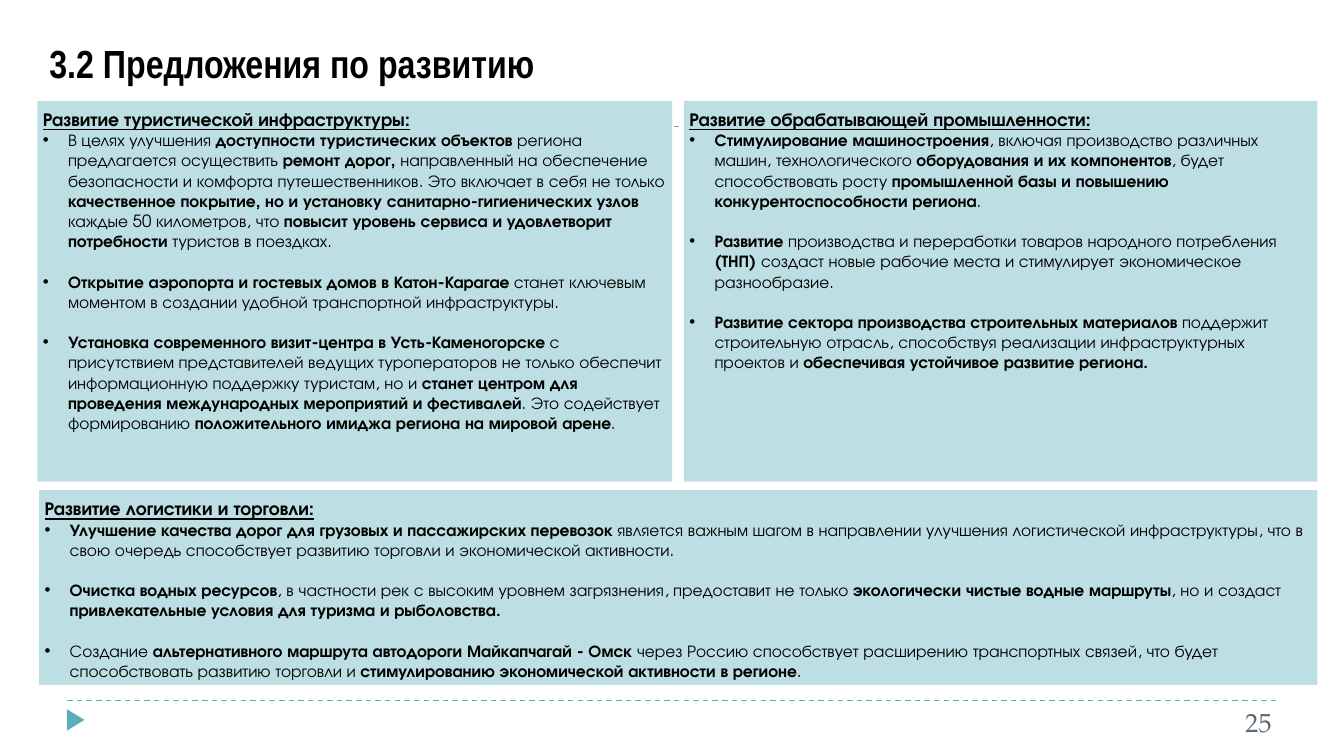
from lxml import etree
from pptx import Presentation
from pptx.dml.color import RGBColor
from pptx.enum.dml import MSO_LINE
from pptx.enum.shapes import MSO_CONNECTOR, MSO_SHAPE
from pptx.enum.text import MSO_ANCHOR, PP_ALIGN
from pptx.oxml.ns import qn
from pptx.util import Pt

TEAL = RGBColor(0x59, 0xB0, 0xB9)
PANEL = RGBColor(0xBD, 0xDF, 0xE3)
GREY = RGBColor(0x5B, 0x69, 0x73)
BLACK = RGBColor(0, 0, 0)
WHITE = RGBColor(0xFF, 0xFF, 0xFF)

BODY_FONT = "TeX Gyre Adventor"
TITLE_FONT = "Arial Narrow"
NUMBER_FONT = "TeX Gyre Pagella"
INDENT = Pt(13.5)
ITEM_GAP = Pt(10.8)

TOURISM = (
    "Развитие туристической инфраструктуры:",
    [
        "В целях улучшения *доступности туристических объектов *региона "
        "предлагается осуществить *ремонт дорог, *направленный на обеспечение "
        "безопасности и комфорта путешественников. Это включает в себя не только "
        "*качественное покрытие, но и установку санитарно-гигиенических узлов *"
        "каждые 50 километров, что *повысит уровень сервиса и удовлетворит "
        "потребности* туристов в поездках.",
        "*Открытие аэропорта и гостевых домов в Катон-Карагае *станет ключевым "
        "моментом в создании удобной транспортной инфраструктуры.",
        "*Установка современного визит-центра в Усть-Каменогорске *с "
        "присутствием представителей ведущих туроператоров не только обеспечит "
        "информационную поддержку туристам, но и *станет центром для проведения "
        "международных мероприятий и фестивалей*. Это содействует формированию "
        "*положительного имиджа региона на мировой арене*.",
    ],
)
INDUSTRY = (
    "Развитие обрабатывающей промышленности:",
    [
        "*Стимулирование машиностроения*, включая производство различных машин, "
        "технологического *оборудования и их компонентов*, будет способствовать "
        "росту *промышленной базы и повышению конкурентоспособности региона*.",
        "*Развитие* производства и переработки товаров народного потребления "
        "*(ТНП) *создаст новые рабочие места и стимулирует экономическое "
        "разнообразие.",
        "*Развитие сектора производства строительных материалов *поддержит "
        "строительную отрасль, способствуя реализации инфраструктурных проектов "
        "и *обеспечивая устойчивое развитие региона.",
    ],
)
LOGISTICS = (
    "Развитие логистики и торговли:",
    [
        "*Улучшение качества дорог для грузовых и пассажирских перевозок *"
        "является важным шагом в направлении улучшения логистической "
        "инфраструктуры, что в свою очередь способствует развитию торговли и "
        "экономической активности.",
        "*Очистка водных ресурсов*, в частности рек с высоким уровнем "
        "загрязнения, предоставит не только *экологически чистые водные "
        "маршруты*, но и создаст *привлекательные условия для туризма и "
        "рыболовства.",
        "Создание *альтернативного маршрута автодороги Майкапчагай - Омск *"
        "через Россию способствует расширению транспортных связей, что будет "
        "способствовать развитию торговли и *стимулированию экономической "
        "активности в регионе*.",
    ],
)


def add_run(p, text, font, size, color=BLACK, bold=False):
    r = p.add_run()
    r.text = text
    r.font.name = font
    r.font.size = Pt(size)
    r.font.color.rgb = color
    r.font.bold = bold
    return r


def add_rule(s, x, y, w):
    rule = s.shapes.add_connector(MSO_CONNECTOR.STRAIGHT, Pt(x), Pt(y), Pt(x + w), Pt(y))
    rule.line.color.rgb = TEAL
    rule.line.width = Pt(0.75)
    rule.line.dash_style = MSO_LINE.DASH
    etree.SubElement(rule._element.spPr, qn("a:effectLst"))


def add_shape(s, kind, box, color):
    sp = s.shapes.add_shape(kind, *map(Pt, box))
    sp.shadow.inherit = False
    sp.fill.solid()
    sp.fill.fore_color.rgb = color
    sp.line.fill.background()
    return sp


def add_label(s, box, text, font, size, color, bold, anchor, align):
    tf = s.shapes.add_textbox(*map(Pt, box)).text_frame
    tf.word_wrap = True
    tf.vertical_anchor = anchor
    p = tf.paragraphs[0]
    p.alignment = align
    add_run(p, text, font, size, color, bold)


def make_bullet(p):
    pPr = p._p.get_or_add_pPr()
    pPr.set("marL", str(INDENT))
    pPr.set("indent", str(-INDENT))
    etree.SubElement(pPr, qn("a:buFont")).set("typeface", "Arial")
    etree.SubElement(pPr, qn("a:buChar")).set("char", "•")


def add_panel(s, box, heading, items):
    tf = add_shape(s, MSO_SHAPE.RECTANGLE, box, PANEL).text_frame
    tf.word_wrap = True
    tf.vertical_anchor = MSO_ANCHOR.TOP
    tf.margin_left = tf.margin_right = Pt(2.9)
    tf.margin_top = tf.margin_bottom = Pt(3.6)
    p = tf.paragraphs[0]
    p.alignment = PP_ALIGN.LEFT
    add_run(p, heading, BODY_FONT, 10, bold=True).font.underline = True
    for i, item in enumerate(items):
        p = tf.add_paragraph()
        p.alignment = PP_ALIGN.LEFT
        p.space_before = ITEM_GAP if i else Pt(0)
        make_bullet(p)
        for j, text in enumerate(item.split("*")):
            if text:
                add_run(p, text, BODY_FONT, 9, bold=j % 2 == 1)


def add_frame(s, x, y, w, h):
    add_rule(s, x + 36, y + 375.2, w - 72)
    add_rule(s, x + 36, y + 67.7, w - 72)
    marker = add_shape(s, MSO_SHAPE.ISOSCELES_TRIANGLE, (x + 34.8, y + 381, 11.5, 9.4), TEAL)
    marker.rotation = 90
    add_label(s, (x + 19.4, y, 648, 49.7), "3.2 Предложения по развитию",
              TITLE_FONT, 21, BLACK, True, MSO_ANCHOR.BOTTOM, PP_ALIGN.LEFT)
    add_label(s, (x + w - 68.4, y + h - 29.9, 36.7, 21.6), "25",
              NUMBER_FONT, 14, GREY, False, MSO_ANCHOR.TOP, PP_ALIGN.RIGHT)


def main():
    prs = Presentation()
    prs.slide_width, prs.slide_height = Pt(720), Pt(405)
    s = prs.slides.add_slide(prs.slide_layouts[6])
    s.background.fill.solid()
    s.background.fill.fore_color.rgb = WHITE
    add_frame(s, 0, 0, 720, 405)
    add_panel(s, (20.1, 54, 340, 204), *TOURISM)
    add_panel(s, (366.4, 54, 339.4, 204), *INDUSTRY)
    add_panel(s, (21, 262.6, 684.8, 104.4), *LOGISTICS)
    prs.save("out.pptx")


if __name__ == "__main__":
    main()
